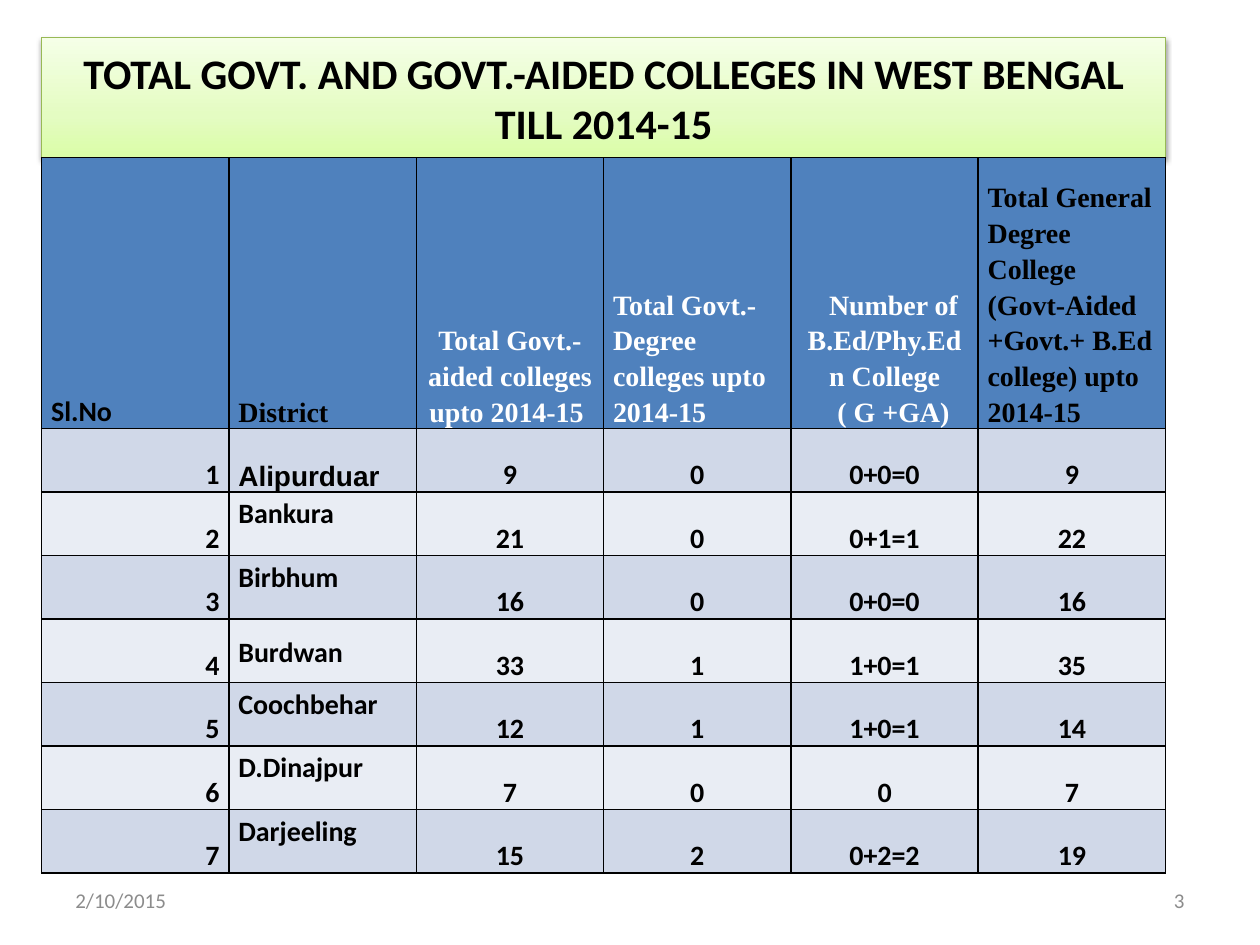
from copy import deepcopy
from dataclasses import dataclass

from lxml.etree import SubElement
from pptx import Presentation
from pptx.dml.color import RGBColor
from pptx.enum.text import MSO_ANCHOR, MSO_AUTO_SIZE, PP_ALIGN
from pptx.oxml.ns import qn
from pptx.util import Cm, Pt

COLORS = {
    "black": "000000", "white": "FFFFFF", "gray": "8C8C8C",
    "header": "4F81BD", "band_dark": "D0D8E8", "band_light": "E9EDF4",
    "title_line": "98B955",
}
TITLE_STOPS = [(0, "DAFDA7"), (0.35, "E4FCC2"), (1, "F5FFE7")]
LEFT, WIDTH = Cm(0.84), Cm(22.66)
TABLE_TOP, HEADER_H, ROW_H = Cm(3.18), Cm(5.46), Cm(1.28)
SERIF = "Times New Roman"


@dataclass
class Entry:
    lines: tuple[str, ...]
    align: PP_ALIGN = PP_ALIGN.LEFT
    anchor: MSO_ANCHOR = MSO_ANCHOR.BOTTOM
    font: str = "Calibri"
    color: str = "black"
    indent: float = 0


@dataclass
class District:
    name: str
    aided: str
    govt: str
    bed: str
    total: str
    anchor: MSO_ANCHOR = MSO_ANCHOR.TOP
    font: str = "Calibri"


@dataclass
class FooterItem:
    text: str
    left: float
    align: PP_ALIGN


HEADERS = [
    Entry(("Sl.No",)),
    Entry(("District",), font=SERIF),
    Entry(("Total Govt.-aided colleges upto 2014-15 ",), PP_ALIGN.CENTER,
          font=SERIF, color="white"),
    Entry(("Total Govt.- Degree colleges upto 2014-15",), font=SERIF, color="white"),
    Entry(("Number of B.Ed/Phy.Edn College", "( G +GA)"), PP_ALIGN.CENTER,
          font=SERIF, color="white", indent=0.36),
    Entry(("Total General Degree College (Govt-Aided +Govt.+ B.Ed college) upto 2014-15",),
          font=SERIF),
]
DISTRICTS = [
    District("Alipurduar", "9", "0", "0+0=0", "9", MSO_ANCHOR.BOTTOM, "Arial"),
    District("Bankura", "21", "0", "0+1=1", "22"),
    District("Birbhum", "16", "0", "0+0=0", "16"),
    District("Burdwan", "33", "1", "1+0=1", "35", MSO_ANCHOR.MIDDLE),
    District("Coochbehar", "12", "1", "1+0=1", "14"),
    District("D.Dinajpur", "7", "0", "0", "7"),
    District("Darjeeling", "15", "2", "0+2=2", "19"),
]
FOOTER = [
    FooterItem("2/10/2015", 1.27, PP_ALIGN.LEFT),
    FooterItem("3", 18.2, PP_ALIGN.RIGHT),
]


def rgb(name: str) -> RGBColor:
    return RGBColor.from_string(COLORS[name])


def add_run(p, text: str, size: float, font: str, color: str, bold: bool) -> None:
    r = p.add_run()
    r.text = text
    r.font.size, r.font.name, r.font.bold = Pt(size), font, bold
    r.font.color.rgb = rgb(color)


def format_title(sp) -> None:
    sp.left, sp.top, sp.width, sp.height = LEFT, Cm(0.76), WIDTH, Cm(2.41)
    sp.fill.gradient()
    sp.fill.gradient_angle = 90
    stops = sp.fill.gradient_stops
    gs_list = sp._element.spPr.find(".//" + qn("a:gsLst"))
    for _ in range(len(TITLE_STOPS) - len(stops)):
        gs_list.append(deepcopy(gs_list[-1]))
    for stop, (position, color) in zip(sp.fill.gradient_stops, TITLE_STOPS):
        stop.position = position
        stop.color.rgb = RGBColor.from_string(color)
    sp.line.color.rgb, sp.line.width = rgb("title_line"), Pt(0.75)

    sp.shadow.inherit = False
    effects = sp._element.spPr.find(qn("a:effectLst"))
    shadow = SubElement(effects, qn("a:outerShdw"), blurRad=str(Pt(3.1)),
                        dist=str(Pt(1.6)), dir="5400000", rotWithShape="0")
    shade = SubElement(shadow, qn("a:srgbClr"), val=COLORS["black"])
    SubElement(shade, qn("a:alpha"), val="38000")

    tf = sp.text_frame
    tf.auto_size, tf.vertical_anchor = MSO_AUTO_SIZE.NONE, MSO_ANCHOR.MIDDLE
    p = tf.paragraphs[0]
    p.alignment = PP_ALIGN.CENTER
    add_run(p, "TOTAL GOVT. AND GOVT.-AIDED COLLEGES IN WEST BENGAL TILL 2014-15",
            24, "Calibri", "black", True)


def add_borders(cell) -> None:
    tc_pr = cell._tc.get_or_add_tcPr()
    for i, side in enumerate(("a:lnL", "a:lnR", "a:lnT", "a:lnB")):
        ln = SubElement(tc_pr, qn(side), w=str(Pt(1)))
        fill = SubElement(ln, qn("a:solidFill"))
        SubElement(fill, qn("a:srgbClr"), val=COLORS["black"])
        tc_pr.insert(i, ln)


def fill_cell(cell, entry: Entry, fill: str) -> None:
    cell.fill.solid()
    cell.fill.fore_color.rgb = rgb(fill)
    add_borders(cell)
    cell.margin_left = cell.margin_right = Cm(0.19)
    cell.margin_top = cell.margin_bottom = 0
    cell.vertical_anchor = entry.anchor
    tf = cell.text_frame
    for i, line in enumerate(entry.lines):
        p = tf.add_paragraph() if i else tf.paragraphs[0]
        p.alignment, p.line_spacing = entry.align, 1.15
        if entry.indent:
            p._p.get_or_add_pPr().set("indent", str(Cm(entry.indent)))
        add_run(p, line, 16, entry.font, entry.color, True)


def district_entries(number: int, d: District) -> list[Entry]:
    counts = (d.aided, d.govt, d.bed, d.total)
    return [
        Entry((str(number),), PP_ALIGN.RIGHT),
        Entry((d.name,), anchor=d.anchor, font=d.font),
        *(Entry((count,), PP_ALIGN.CENTER) for count in counts),
    ]


def add_college_table(s) -> None:
    rows = [HEADERS] + [district_entries(n, d) for n, d in enumerate(DISTRICTS, 1)]
    height = HEADER_H + ROW_H * len(DISTRICTS)
    table = s.shapes.add_table(len(rows), len(HEADERS), LEFT, TABLE_TOP,
                               WIDTH, height).table
    for n, entries in enumerate(rows):
        table.rows[n].height = ROW_H if n else HEADER_H
        band = "band_dark" if n % 2 else "band_light"
        for col, entry in enumerate(entries):
            fill_cell(table.cell(n, col), entry, band if n else "header")


def add_footer_item(s, item: FooterItem) -> None:
    tf = s.shapes.add_textbox(Cm(item.left), Cm(17.65), Cm(5.93), Cm(1.01)).text_frame
    tf.word_wrap, tf.vertical_anchor = True, MSO_ANCHOR.MIDDLE
    p = tf.paragraphs[0]
    p.alignment = item.align
    add_run(p, item.text, 12, "Calibri", "gray", False)


def main() -> None:
    prs = Presentation()
    prs.slide_width, prs.slide_height = Cm(25.4), Cm(19.05)
    s = prs.slides.add_slide(prs.slide_layouts[5])
    format_title(s.shapes.title)
    add_college_table(s)
    for item in FOOTER:
        add_footer_item(s, item)
    prs.save("out.pptx")


if __name__ == "__main__":
    main()
